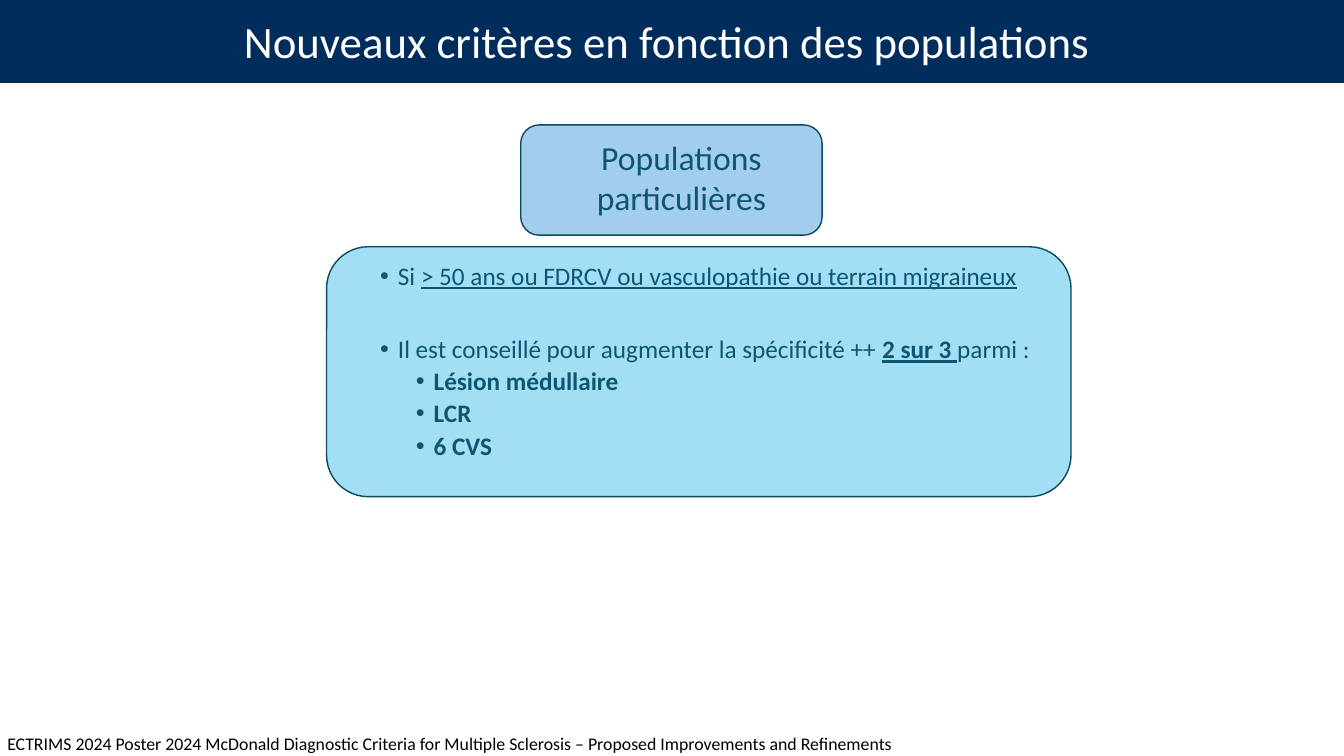
from dataclasses import dataclass

from lxml import etree
from pptx import Presentation
from pptx import util as u
from pptx.dml.color import RGBColor
from pptx.enum import shapes, text
from pptx.oxml.ns import qn

PX = 9525  # EMU per px, 96 px to the inch
FONT = "Calibri"
NAVY, TEAL, OUTLINE = "012D5C", "0D5672", "0B4960"
LEFT, CENTER = text.PP_ALIGN.LEFT, text.PP_ALIGN.CENTER
RECT = shapes.MSO_SHAPE.RECTANGLE
ROUNDED = shapes.MSO_SHAPE.ROUNDED_RECTANGLE


@dataclass
class Panel:
    box: tuple[int, int, int, int]
    kind: shapes.MSO_SHAPE
    fill: str
    line: str
    weight: float


@dataclass
class Label:
    box: tuple[int, int, int, int]
    wording: str
    size: float
    color: str
    align: text.PP_ALIGN
    margins: tuple[int, int]  # horizontal, vertical
    anchor: text.MSO_ANCHOR = text.MSO_ANCHOR.TOP


@dataclass
class Phrase:
    wording: str
    bold: bool = False
    underline: bool = False


@dataclass
class Bullet:
    phrases: list[Phrase]
    level: int = 0
    before: float = 0


def px(length: int) -> int:
    return u.Emu(length * PX)


def rgb(color: str) -> RGBColor:
    return RGBColor.from_string(color)


def style(font, size: float, color: str) -> None:
    font.name, font.size = FONT, u.Pt(size)
    font.color.rgb = rgb(color)


def draw_panel(slide, panel: Panel) -> None:
    shape = slide.shapes.add_shape(panel.kind, *map(px, panel.box))
    shape.shadow.inherit = False
    shape.fill.solid()
    shape.fill.fore_color.rgb = rgb(panel.fill)
    shape.line.color.rgb = rgb(panel.line)
    shape.line.width = u.Pt(panel.weight)


def add_frame(slide, box: tuple[int, int, int, int], margins: tuple[int, int]):
    frame = slide.shapes.add_textbox(*map(px, box)).text_frame
    frame.word_wrap = True
    frame.margin_left = frame.margin_right = px(margins[0])
    frame.margin_top = frame.margin_bottom = px(margins[1])
    return frame


def draw_label(slide, label: Label) -> None:
    frame = add_frame(slide, label.box, label.margins)
    frame.vertical_anchor = label.anchor
    frame.text = label.wording
    paragraph = frame.paragraphs[0]
    paragraph.alignment = label.align
    style(paragraph.runs[0].font, label.size, label.color)


def add_bullet_mark(paragraph, indent: int, hanging: int) -> None:
    props = paragraph._p.get_or_add_pPr()
    props.set("marL", str(px(indent)))
    props.set("indent", str(-px(hanging)))
    mark_color = etree.SubElement(props, qn("a:buClr"))
    etree.SubElement(mark_color, qn("a:srgbClr"), val=TEAL)
    etree.SubElement(props, qn("a:buFont"), typeface="Arial")
    etree.SubElement(props, qn("a:buChar"), char="•")


def draw_bullets(slide, box: tuple[int, int, int, int], bullets: list[Bullet]) -> None:
    frame = add_frame(slide, box, (10, 5))
    for i, bullet in enumerate(bullets):
        paragraph = frame.paragraphs[0] if i == 0 else frame.add_paragraph()
        paragraph.level = bullet.level
        add_bullet_mark(paragraph, 17 + 34 * bullet.level, 17)
        paragraph.alignment = LEFT
        paragraph.line_spacing = 0.9
        paragraph.space_before = u.Pt(bullet.before)
        for phrase in bullet.phrases:
            run = paragraph.add_run()
            run.text = phrase.wording
            style(run.font, 18, TEAL)
            run.font.bold, run.font.underline = phrase.bold, phrase.underline


TITLE_BOX = (0, -1, 1280, 80)
PANELS = [
    Panel(TITLE_BOX, RECT, NAVY, NAVY, 0.75),
    Panel((311, 235, 709, 238), ROUNDED, "A2DEF4", OUTLINE, 1),
    Panel((496, 119, 287, 105), ROUNDED, "A2CDED", OUTLINE, 1),
]
LABELS = [
    Label(TITLE_BOX, "Nouveaux critères en fonction des populations ", 32, "FFFFFF",
          CENTER, (10, 5), text.MSO_ANCHOR.MIDDLE),
    Label((516, 126, 266, 84), "Populations particulières", 24, TEAL, CENTER, (7, 4)),
    Label((0, 691, 1256, 35),
          "ECTRIMS 2024 Poster 2024 McDonald Diagnostic Criteria for Multiple Sclerosis"
          " – Proposed Improvements and Refinements", 12.7, "000000", LEFT, (7, 7)),
]
CRITERIA = [
    Bullet([Phrase("Si "),
            Phrase("> 50 ans ou FDRCV ou vasculopathie ou terrain migraineux", underline=True)]),
    Bullet([Phrase("Il est conseillé pour augmenter la spécificité ++ "),
            Phrase("2 sur 3 ", bold=True, underline=True), Phrase("parmi :")], before=33),
    *(Bullet([Phrase(criterion, bold=True)], level=1, before=3.5)
      for criterion in ("Lésion médullaire", "LCR", "6 CVS")),
]


def main() -> None:
    deck = Presentation()
    deck.slide_width, deck.slide_height = px(1280), px(720)
    slide = deck.slides.add_slide(deck.slide_layouts[6])

    # Title band and rounded panels
    for panel in PANELS:
        draw_panel(slide, panel)

    # Title, population heading and reference
    for label in LABELS:
        draw_label(slide, label)

    # Criteria for the particular populations
    draw_bullets(slide, (352, 246, 669, 288), CRITERIA)

    deck.save("out.pptx")


if __name__ == "__main__":
    main()
